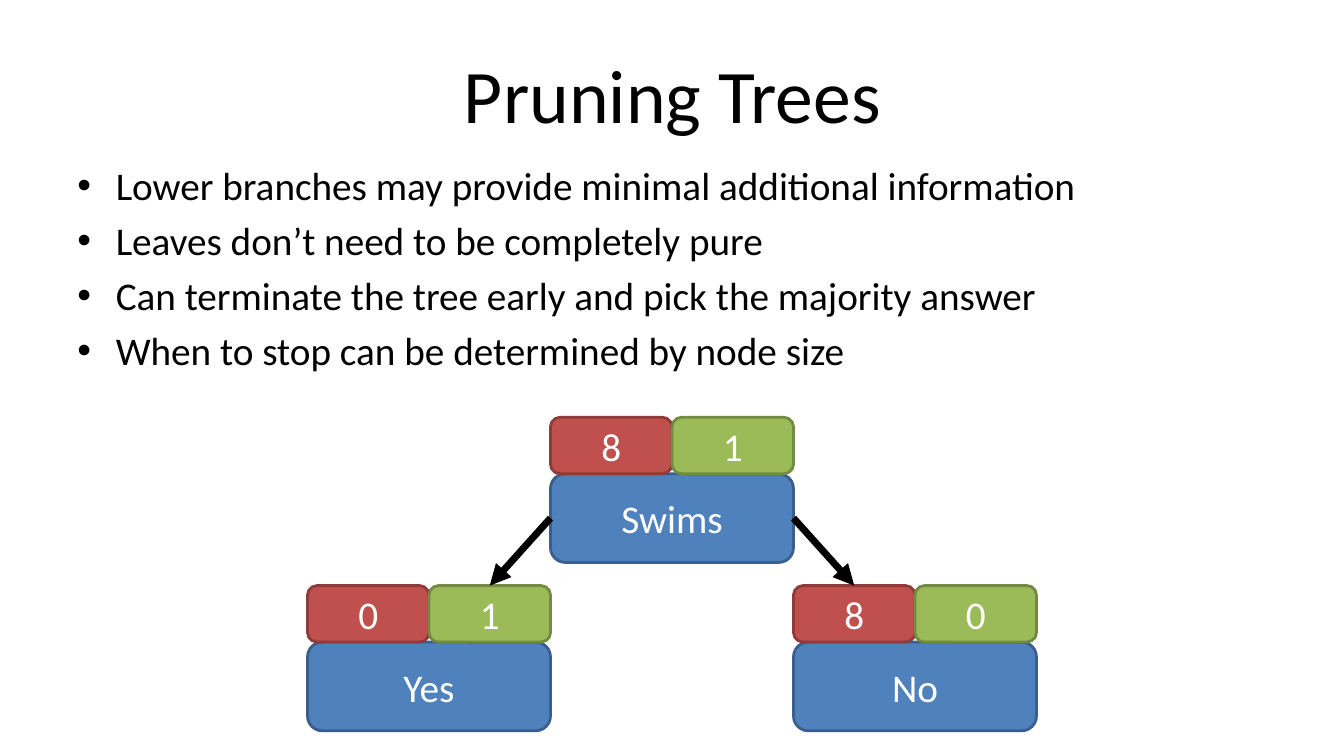
from dataclasses import dataclass

from lxml import etree
from pptx import Presentation
from pptx.dml.color import RGBColor
from pptx.enum.shapes import MSO_CONNECTOR, MSO_SHAPE
from pptx.enum.text import MSO_ANCHOR, PP_ALIGN
from pptx.oxml.ns import qn
from pptx.shapes.autoshape import Shape
from pptx.shapes.group import GroupShape
from pptx.slide import Slide
from pptx.util import Inches, Pt

ROUNDED = MSO_SHAPE.ROUNDED_RECTANGLE
STRAIGHT = MSO_CONNECTOR.STRAIGHT
CENTER, LEFT = PP_ALIGN.CENTER, PP_ALIGN.LEFT
MIDDLE, TOP = MSO_ANCHOR.MIDDLE, MSO_ANCHOR.TOP
TOP_SITE, LEFT_SITE, RIGHT_SITE = 0, 1, 3

FONT = "Calibri"
BLACK, WHITE = "000000", "FFFFFF"
BLUE, RED, GREEN = ("4F81BD", "3A5F8C"), ("C0504D", "8E3B39"), ("9BBB59", "738A42")

LABEL_WIDTH, LABEL_HEIGHT = 2.41, 0.88
COUNT_WIDTH, COUNT_HEIGHT = LABEL_WIDTH / 2, 0.56
ROOT_LEFT, ROOT_TOP, LEAF_TOP = 5.46, 4.14, 5.81

BULLETS = [
    "Lower branches may provide minimal additional information",
    "Leaves don’t need to be completely pure",
    "Can terminate the tree early and pick the majority answer",
    "When to stop can be determined by node size",
]


@dataclass
class Node:
    label: str
    red_count: int
    green_count: int
    left: float
    top: float


@dataclass
class DrawnNode:
    label: Shape
    red: Shape
    green: Shape


ROOT = Node("Swims", 8, 1, ROOT_LEFT, ROOT_TOP)
YES = Node("Yes", 0, 1, ROOT_LEFT - LABEL_WIDTH, LEAF_TOP)
NO = Node("No", 8, 0, ROOT_LEFT + LABEL_WIDTH, LEAF_TOP)


def color(value: str) -> RGBColor:
    return RGBColor.from_string(value)


def write_text(shape: Shape, lines: list[str], *, size: float = 28,
               font_color: str = BLACK, align: PP_ALIGN = CENTER,
               anchor: MSO_ANCHOR = MIDDLE, bullet: str = "",
               space_before: float = 0) -> None:
    frame = shape.text_frame
    frame.word_wrap = True
    frame.vertical_anchor = anchor
    for index, line in enumerate(lines):
        paragraph = frame.paragraphs[0] if index == 0 else frame.add_paragraph()
        paragraph.text = line
        paragraph.alignment = align
        if index:
            paragraph.space_before = Pt(space_before)
        if bullet:
            add_bullet(paragraph, bullet)
        paragraph.font.name = FONT
        paragraph.font.size = Pt(size)
        paragraph.font.color.rgb = color(font_color)


def add_bullet(paragraph, character: str) -> None:
    properties = paragraph._p.get_or_add_pPr()
    properties.set("marL", str(Inches(0.38)))
    properties.set("indent", str(-Inches(0.38)))
    font = etree.SubElement(properties, qn("a:buFont"))
    font.set("typeface", "Arial")
    etree.SubElement(properties, qn("a:buChar")).set("char", character)


def add_text_box(slide: Slide, top: float, height: float) -> Shape:
    return slide.shapes.add_textbox(Inches(0.67), Inches(top), Inches(12), Inches(height))


def add_box(group: GroupShape, text: str, left: float, top: float,
            width: float, height: float, colors: tuple[str, str]) -> Shape:
    box = group.shapes.add_shape(
        ROUNDED, Inches(left), Inches(top), Inches(width), Inches(height))
    fill_color, line_color = colors
    box.shadow.inherit = False
    box.fill.solid()
    box.fill.fore_color.rgb = color(fill_color)
    box.line.color.rgb = color(line_color)
    box.line.width = Pt(2)
    write_text(box, [text], font_color=WHITE)
    return box


def add_node(slide: Slide, node: Node) -> DrawnNode:
    """Draw a label with its red and green counts side by side above it."""
    group = slide.shapes.add_group_shape()
    label = add_box(group, node.label, node.left, node.top + COUNT_HEIGHT,
                    LABEL_WIDTH, LABEL_HEIGHT, BLUE)
    red = add_box(group, str(node.red_count), node.left, node.top,
                  COUNT_WIDTH, COUNT_HEIGHT, RED)
    green = add_box(group, str(node.green_count), node.left + COUNT_WIDTH, node.top,
                    COUNT_WIDTH, COUNT_HEIGHT, GREEN)
    return DrawnNode(label, red, green)


def add_arrow(slide: Slide, start: Shape, start_site: int, end: Shape) -> None:
    arrow = slide.shapes.add_connector(STRAIGHT, 0, 0, 0, 0)
    arrow.begin_connect(start, start_site)
    arrow.end_connect(end, TOP_SITE)
    arrow.line.color.rgb = color(BLACK)
    arrow.line.width = Pt(5)
    etree.SubElement(arrow.line._get_or_add_ln(), qn("a:tailEnd")).set("type", "triangle")
    etree.SubElement(arrow._element.spPr, qn("a:effectLst"))


def main() -> None:
    presentation = Presentation()
    presentation.slide_width = Inches(13.33)
    presentation.slide_height = Inches(7.5)
    slide = presentation.slides.add_slide(presentation.slide_layouts[6])

    write_text(add_text_box(slide, 0.3, 1.25), ["Pruning Trees"], size=54)
    write_text(add_text_box(slide, 1.55, 4.95), BULLETS, align=LEFT, anchor=TOP,
               bullet="•", space_before=5.6)

    root, yes, no = [add_node(slide, node) for node in (ROOT, YES, NO)]
    add_arrow(slide, root.label, LEFT_SITE, yes.green)
    add_arrow(slide, root.label, RIGHT_SITE, no.red)

    presentation.save("out.pptx")


if __name__ == "__main__":
    main()
